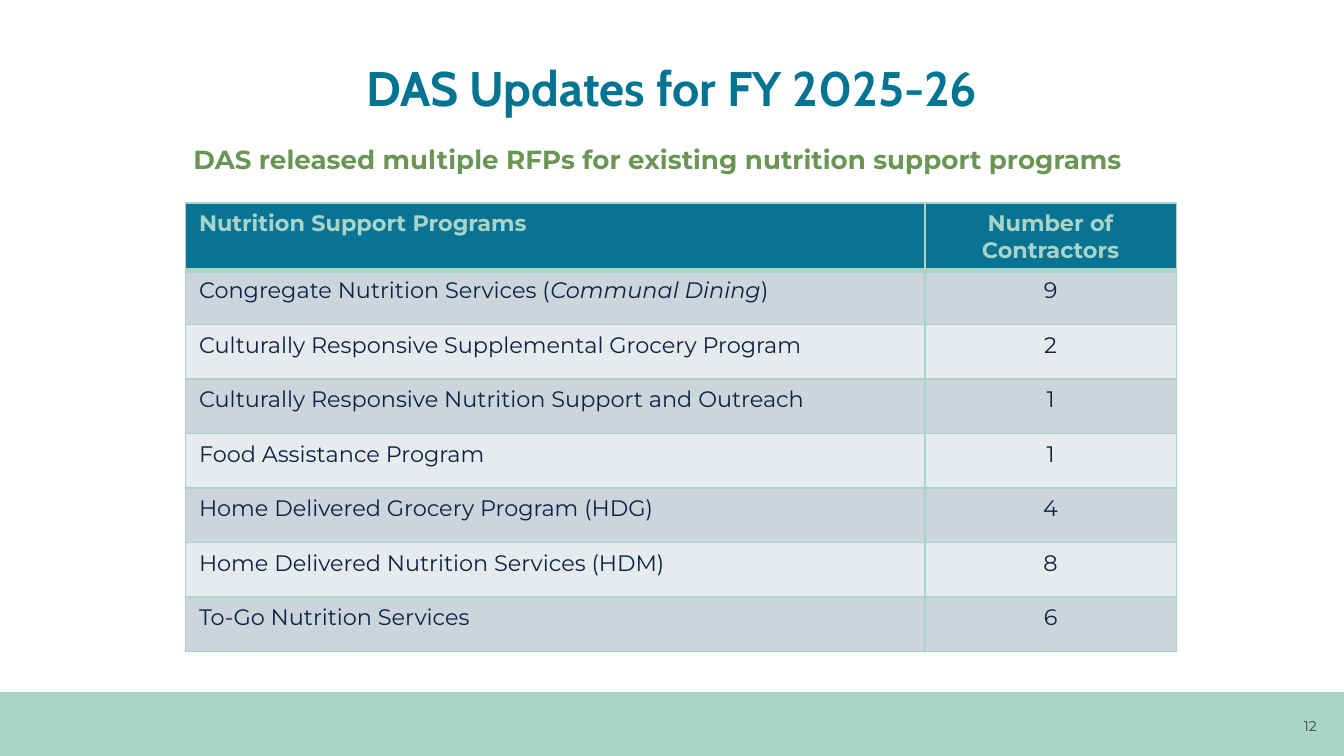
from lxml.etree import SubElement as Sub
from pptx import Presentation
from pptx.dml.color import RGBColor as RGB
from pptx.enum.shapes import MSO_SHAPE as Shape
from pptx.enum.text import MSO_ANCHOR as Anchor, MSO_AUTO_SIZE as Auto, PP_ALIGN as Align
from pptx.oxml.ns import qn
from pptx.util import Pt

TITLE = "DAS Updates for FY 2025-26"
LEAD = "DAS released multiple RFPs for existing nutrition support programs"
PAGE = "12"
HEAD = ("Nutrition Support Programs", "Number of Contractors")
# Text between asterisks is italic.
ROWS = [
    ("Congregate Nutrition Services (*Communal Dining*)", 9),
    ("Culturally Responsive Supplemental Grocery Program", 2),
    ("Culturally Responsive Nutrition Support and Outreach", 1),
    ("Food Assistance Program", 1),
    ("Home Delivered Grocery Program (HDG)", 4),
    ("Home Delivered Nutrition Services (HDM)", 8),
    ("To-Go Nutrition Services", 6),
]

TEAL = RGB(0x01, 0x74, 0x93)
HEAD_BG = RGB(0x09, 0x73, 0x94)
MINT = RGB(0xA9, 0xD4, 0xC8)
BAND = RGB(0xA7, 0xD5, 0xC7)
GREEN = RGB(0x69, 0x96, 0x52)
NAVY = RGB(0x0C, 0x22, 0x46)
GRAY = RGB(0x42, 0x46, 0x40)
STRIPES = (RGB(0xCC, 0xD5, 0xDC), RGB(0xE7, 0xEB, 0xEE))

WIDE, HIGH = 720, 405
BAND_TOP = 370.8
COLS = (396, 134.8)
HEAD_H, ROW_H = 36, 29.2


def write(frame, text, size=12, color=NAVY, font="Montserrat", bold=False,
          align=Align.CENTER, space=None):
    para = frame.paragraphs[0]
    para.alignment = align
    if space:
        para.line_spacing = space
    for i, part in enumerate(text.split("*")):
        run = para.add_run()
        run.text = part
        face = run.font
        face.name, face.size, face.bold = font, Pt(size), bold
        face.italic = i % 2 == 1
        face.color.rgb = color


def add_box(slide, text, left, top, width, height, **style):
    box = slide.shapes.add_textbox(Pt(left), Pt(top), Pt(width), Pt(height))
    frame = box.text_frame
    frame.word_wrap = True
    frame.vertical_anchor = Anchor.MIDDLE
    write(frame, text, **style)


def edge(cell, **widths):
    """Draw the cell's borders; widths maps L, R, T and B to points."""
    props = cell._tc.get_or_add_tcPr()
    for side, width in widths.items():
        line = Sub(props, qn(f"a:ln{side}"), w=str(Pt(width)))
        Sub(Sub(line, qn("a:solidFill")), qn("a:srgbClr"), val=str(MINT))


def add_grid(slide):
    count = len(ROWS) + 1
    grid = slide.shapes.add_table(
        count, len(COLS), Pt(99.4), Pt(108.7), Pt(sum(COLS)),
        Pt(HEAD_H + ROW_H * len(ROWS))).table
    for col, width in zip(grid.columns, COLS):
        col.width = Pt(width)
    for r, row in enumerate([HEAD] + ROWS):
        grid.rows[r].height = Pt(ROW_H if r else HEAD_H)
        for c, value in enumerate(row):
            cell = grid.cell(r, c)
            edge(cell, L=1, R=1, T=3 if r == 1 else 1, B=1 if r else 3)
            cell.fill.solid()
            cell.fill.fore_color.rgb = STRIPES[(r - 1) % 2] if r else HEAD_BG
            write(cell.text_frame, str(value), color=NAVY if r else MINT,
                  bold=r == 0, align=Align.CENTER if c else Align.LEFT)


def main():
    deck = Presentation()
    deck.slide_width, deck.slide_height = Pt(WIDE), Pt(HIGH)
    slide = deck.slides.add_slide(deck.slide_layouts[5])

    band = slide.shapes.add_shape(Shape.RECTANGLE, 0, Pt(BAND_TOP), Pt(WIDE),
                                  Pt(HIGH - BAND_TOP))
    band.shadow.inherit = False
    band.fill.solid()
    band.fill.fore_color.rgb = BAND
    band.line.fill.background()

    title = slide.shapes.title
    title.left, title.top = Pt(56), Pt(32.4)
    title.width, title.height = Pt(608), Pt(32.4)
    frame = title.text_frame
    frame.auto_size = Auto.NONE
    frame.word_wrap = True
    frame.vertical_anchor = Anchor.MIDDLE
    frame.margin_left = frame.margin_right = Pt(2.7)
    frame.margin_top = frame.margin_bottom = Pt(5)
    write(frame, TITLE, size=26, color=TEAL, font="Cabin", bold=True, space=0.9)

    add_box(slide, LEAD, 41, 64.8, 623, 43.2, size=14, color=GREEN, bold=True,
            space=0.9)
    add_grid(slide)
    add_box(slide, PAGE, 684, 378, 36, 21.6, size=7.5, color=GRAY)
    deck.save("out.pptx")


if __name__ == "__main__":
    main()
